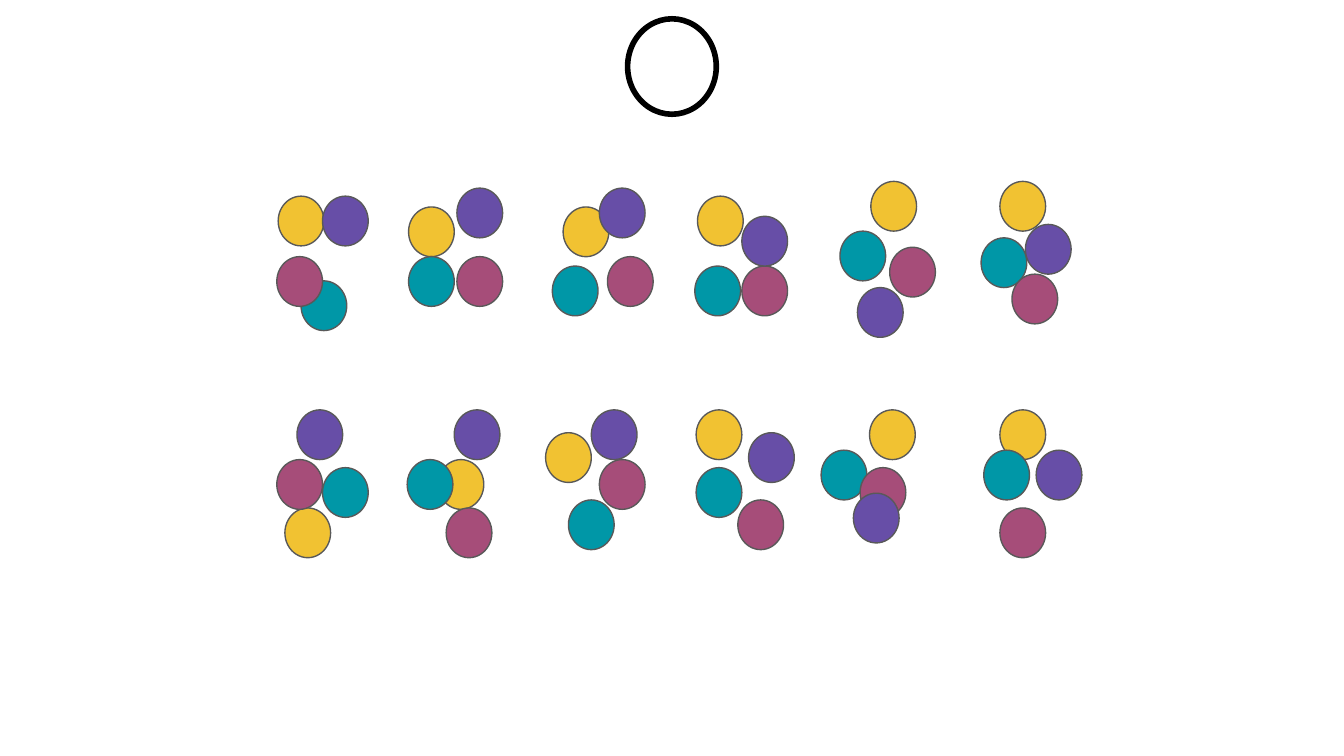
"""Build a slide with twelve clusters of four coloured dots below a ring."""
from pptx import Presentation
from pptx.dml.color import RGBColor
from pptx.enum.shapes import MSO_SHAPE
from pptx.util import Inches, Pt

OVAL = MSO_SHAPE.OVAL

THEME = {
    "dots": ("F1C232", "0097A7", "A64D79", "674EA7"),
    "dot_line": "595959",
    "ring_fill": "FFFFFF",
    "ring_line": "000000",
}

# Each cluster lists the top-left corners of its yellow, teal, pink and purple dots.
UPPER_CLUSTERS = [
    [(2.07, 1.46), (2.24, 2.09), (2.06, 1.91), (2.4, 1.46)],
    [(3.04, 1.54), (3.04, 1.91), (3.4, 1.91), (3.4, 1.4)],
    [(4.19, 1.54), (4.11, 1.98), (4.52, 1.91), (4.46, 1.4)],
    [(5.19, 1.46), (5.17, 1.98), (5.52, 1.98), (5.52, 1.61)],
    [(6.48, 1.35), (6.25, 1.72), (6.62, 1.84), (6.38, 2.14)],
    [(7.44, 1.35), (7.3, 1.77), (7.53, 2.04), (7.63, 1.67)],
]
LOWER_CLUSTERS = [
    [(2.12, 3.78), (2.4, 3.48), (2.06, 3.42), (2.21, 3.05)],
    [(3.26, 3.42), (3.03, 3.42), (3.32, 3.78), (3.38, 3.05)],
    [(4.06, 3.22), (4.23, 3.72), (4.46, 3.42), (4.4, 3.05)],
    [(5.18, 3.05), (5.18, 3.48), (5.49, 3.72), (5.57, 3.22)],
    [(6.47, 3.05), (6.11, 3.35), (6.4, 3.48), (6.35, 3.67)],
    [(7.44, 3.05), (7.32, 3.35), (7.44, 3.78), (7.71, 3.35)],
]
SLIDE_WIDTH = 10
SLIDE_HEIGHT = SLIDE_WIDTH * 9 / 16
DOT_SIZE = (0.34, 0.37)
RING_SIZE = (0.66, 0.71)
RING_TOP = 0.14


def add_oval(slide, corner, size, fill, line, weight):
    oval = slide.shapes.add_shape(OVAL, *map(Inches, (*corner, *size)))
    oval.shadow.inherit = False
    oval.fill.solid()
    oval.fill.fore_color.rgb = RGBColor.from_string(fill)
    oval.line.color.rgb = RGBColor.from_string(line)
    oval.line.width = Pt(weight)


def main():
    deck = Presentation()
    deck.slide_width = Inches(SLIDE_WIDTH)
    deck.slide_height = Inches(SLIDE_HEIGHT)
    slide = deck.slides.add_slide(deck.slide_layouts[6])

    for cluster in UPPER_CLUSTERS + LOWER_CLUSTERS:
        for corner, colour in zip(cluster, THEME["dots"]):
            add_oval(slide, corner, DOT_SIZE, colour, THEME["dot_line"], 0.75)

    ring_corner = ((SLIDE_WIDTH - RING_SIZE[0]) / 2, RING_TOP)
    add_oval(slide, ring_corner, RING_SIZE, THEME["ring_fill"], THEME["ring_line"], 3)
    deck.save("out.pptx")


if __name__ == "__main__":
    main()
